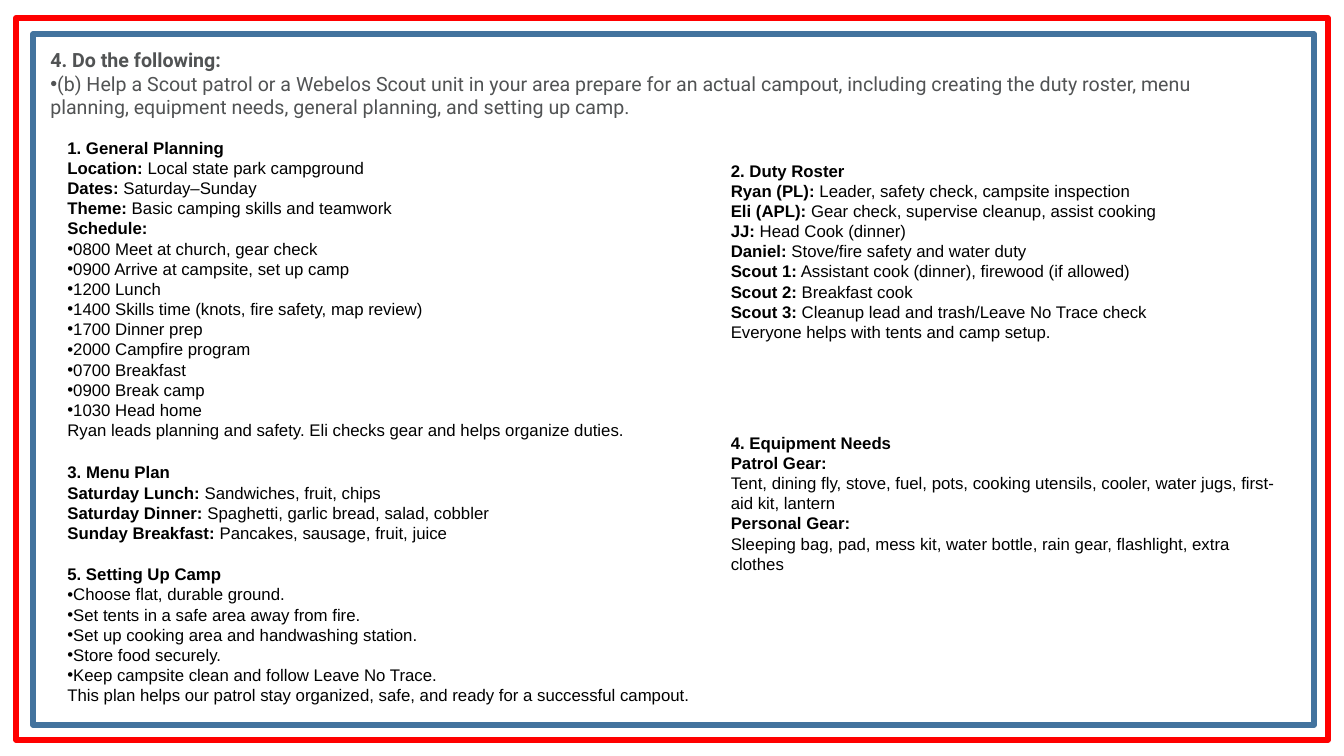
from lxml import etree
from pptx import Presentation
from pptx.dml.color import RGBColor
from pptx.enum import shapes, text
from pptx.oxml import ns
from pptx.util import Inches, Pt

RED = RGBColor(0xFF, 0x00, 0x00)
BLUE = RGBColor(0x43, 0x73, 0x9E)
GREY = RGBColor(0x51, 0x53, 0x54)
BLACK = RGBColor(0x00, 0x00, 0x00)

TASK = """*4. Do the following:*
•(b) Help a Scout patrol or a Webelos Scout unit in your area prepare for an actual campout, including creating the duty roster, menu planning, equipment needs, general planning, and setting up camp."""

PLAN = """*1. General Planning*
*Location:* Local state park campground
*Dates:* Saturday–Sunday
*Theme:* Basic camping skills and teamwork
*Schedule:*
•0800 Meet at church, gear check
•0900 Arrive at campsite, set up camp
•1200 Lunch
•1400 Skills time (knots, fire safety, map review)
•1700 Dinner prep
•2000 Campfire program
•0700 Breakfast
•0900 Break camp
•1030 Head home
Ryan leads planning and safety. Eli checks gear and helps organize duties."""

DUTY = """*2. Duty Roster*
*Ryan (PL):* Leader, safety check, campsite inspection
*Eli (APL):* Gear check, supervise cleanup, assist cooking
*JJ:* Head Cook (dinner)
*Daniel:* Stove/fire safety and water duty
*Scout 1:* Assistant cook (dinner), firewood (if allowed)
*Scout 2:* Breakfast cook
*Scout 3:* Cleanup lead and trash/Leave No Trace check
Everyone helps with tents and camp setup."""

MENU = """*3. Menu Plan*
*Saturday Lunch:* Sandwiches, fruit, chips
*Saturday Dinner:* Spaghetti, garlic bread, salad, cobbler
*Sunday Breakfast:* Pancakes, sausage, fruit, juice"""

GEAR = """*4. Equipment Needs*
*Patrol Gear:*
Tent, dining fly, stove, fuel, pots, cooking utensils, cooler, water jugs, first-aid kit, lantern
*Personal Gear:*
Sleeping bag, pad, mess kit, water bottle, rain gear, flashlight, extra clothes"""

CAMP = """*5. Setting Up Camp*
•Choose flat, durable ground.
•Set tents in a safe area away from fire.
•Set up cooking area and handwashing station.
•Store food securely.
•Keep campsite clean and follow Leave No Trace.
This plan helps our patrol stay organized, safe, and ready for a successful campout."""


def add_frame(slide, box, color):
    """Draw an unfilled border rectangle."""
    frame = slide.shapes.add_shape(shapes.MSO_SHAPE.RECTANGLE, *map(Inches, box))
    frame.shadow.inherit = False
    frame.fill.background()
    frame.line.color.rgb = color
    frame.line.width = Pt(4.5)


def add_bullet(para):
    """Give a paragraph a bullet that sits tight against its text."""
    props = para._p.get_or_add_pPr()
    props.set("marL", "0")
    props.set("indent", "0")
    etree.SubElement(props, ns.qn("a:buFont")).set("typeface", "Arial")
    etree.SubElement(props, ns.qn("a:buChar")).set("char", "•")


def add_line(para, line, face, size, color):
    """Write one line, with starred parts bold and a leading dot as bullet."""
    if line.startswith("•"):
        add_bullet(para)
    para.font.name = face
    para.font.size = Pt(size)
    para.font.color.rgb = color
    for spot, part in enumerate(line.removeprefix("•").split("*")):
        if part:
            run = para.add_run()
            run.text = part
            run.font.bold = spot % 2 == 1


def add_note(slide, box, words, face="Arial", size=12, color=BLACK,
             anchor=text.MSO_ANCHOR.MIDDLE):
    """Add a text box with one paragraph per line of words."""
    frame = slide.shapes.add_textbox(*map(Inches, box)).text_frame
    frame.word_wrap = True
    frame.vertical_anchor = anchor
    for spot, line in enumerate(words.splitlines()):
        para = frame.add_paragraph() if spot else frame.paragraphs[0]
        add_line(para, line, face, size, color)


def main():
    """Build and save the campout plan slide."""
    deck = Presentation()
    deck.slide_width, deck.slide_height = Inches(13.33), Inches(7.5)
    slide = deck.slides.add_slide(deck.slide_layouts[6])
    add_frame(slide, (0.16, 0.18, 13.01, 7.16), RED)
    add_frame(slide, (0.33, 0.34, 12.7, 6.85), BLUE)
    add_note(slide, (0.4, 0.43, 11.58, 0.81), TASK, "Roboto", 14, GREY,
             text.MSO_ANCHOR.TOP)
    left, right = 0.57, 7.15
    add_note(slide, (left, 1.3, 5.76, 3.13), PLAN)
    add_note(slide, (right, 1.53, 4.46, 1.92), DUTY)
    add_note(slide, (left, 4.53, 4.42, 0.91), MENU)
    add_note(slide, (right, 4.23, 5.64, 1.52), GEAR)
    add_note(slide, (left, 5.54, 6.43, 1.51), CAMP)
    deck.save("out.pptx")


if __name__ == "__main__":
    main()
